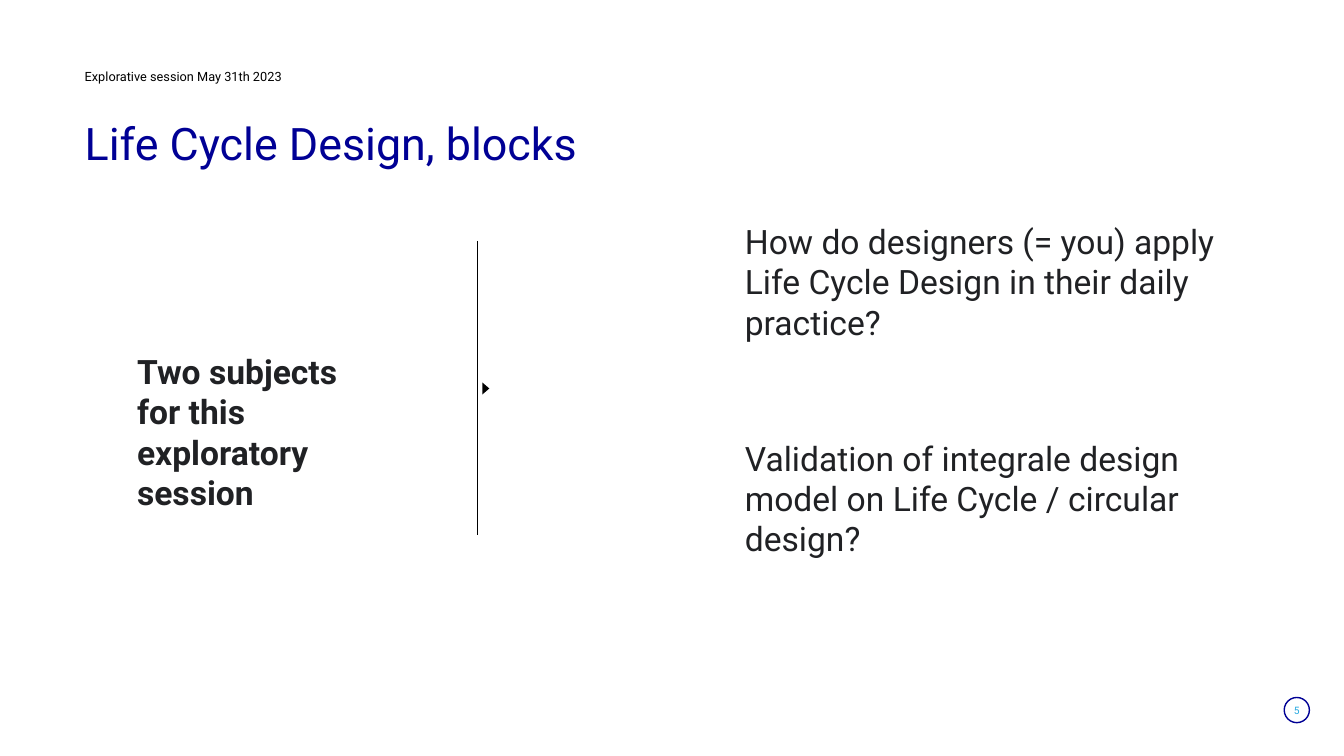
from lxml.etree import SubElement
from pptx import Presentation
from pptx.dml.color import RGBColor
from pptx.enum.shapes import MSO_CONNECTOR, MSO_SHAPE
from pptx.enum.text import MSO_ANCHOR, PP_ALIGN
from pptx.oxml.ns import qn
from pptx.util import Pt

NAVY = RGBColor(0x00, 0x00, 0x95)
SKY = RGBColor(0x24, 0xA8, 0xE0)
INK = RGBColor(0x20, 0x21, 0x24)
BLACK = RGBColor(0x00, 0x00, 0x00)


class SlideBuilder:
    font_name = "Roboto"

    def __init__(self, slide):
        self.slide = slide

    def fill_text(self, shape, paragraphs, size, color, bold=False, line_spacing=1.0,
                  align=PP_ALIGN.LEFT, anchor=MSO_ANCHOR.TOP):
        """Write (text, space before) pairs into a shape without insets."""
        frame = shape.text_frame
        frame.word_wrap = True
        frame.vertical_anchor = anchor
        frame.margin_left = frame.margin_right = frame.margin_top = frame.margin_bottom = 0
        for index, (text, space_before) in enumerate(paragraphs):
            paragraph = frame.add_paragraph() if index else frame.paragraphs[0]
            paragraph.alignment = align
            paragraph.line_spacing = line_spacing
            paragraph.space_before = Pt(space_before)
            run = paragraph.add_run()
            run.text = text
            run.font.name = self.font_name
            run.font.size = Pt(size)
            run.font.bold = bold
            run.font.color.rgb = color

    def title(self, text, left, top, width, height, size, color):
        shape = self.slide.shapes.title
        shape.left, shape.top, shape.width, shape.height = map(Pt, (left, top, width, height))
        self.fill_text(shape, [(text, 0)], size, color, line_spacing=0.9,
                       anchor=MSO_ANCHOR.MIDDLE)

    def text(self, paragraphs, left, top, width, height, size, color, **style):
        box = self.slide.shapes.add_textbox(*map(Pt, (left, top, width, height)))
        self.fill_text(box, paragraphs, size, color, **style)

    def shape(self, kind, left, top, width, height, fill=None, line=None, rotation=0):
        shape = self.slide.shapes.add_shape(kind, *map(Pt, (left, top, width, height)))
        shape.shadow.inherit = False
        shape.rotation = rotation
        if fill is None:
            shape.fill.background()
        else:
            shape.fill.solid()
            shape.fill.fore_color.rgb = fill
        if line is None:
            shape.line.fill.background()
        else:
            shape.line.color.rgb = line
            shape.line.width = Pt(1)

    def vertical_line(self, x, top, bottom, color):
        line = self.slide.shapes.add_connector(
            MSO_CONNECTOR.STRAIGHT, Pt(x), Pt(top), Pt(x), Pt(bottom))
        line.line.color.rgb = color
        line.line.width = Pt(0.75)
        SubElement(line.element.spPr, qn("a:effectLst"))


def main():
    presentation = Presentation()
    presentation.slide_width, presentation.slide_height = Pt(960), Pt(540)
    builder = SlideBuilder(presentation.slides.add_slide(presentation.slide_layouts[5]))

    builder.title("Explorative session May 31th 2023", 60.5, 46.8, 839.5, 17.3, 9.1, BLACK)
    builder.text([("Life Cycle Design, blocks", 0)], 60.5, 76.3, 838, 69, 32, NAVY,
                 line_spacing=1.16)

    builder.text([("Two subjects for this exploratory session", 0)],
                 97.9, 250.6, 173.5, 41, 24, INK, bold=True)
    builder.vertical_line(341.3, 172.1, 382.3, BLACK)
    builder.shape(MSO_SHAPE.ISOSCELES_TRIANGLE, 342.7, 275, 8.6, 5, fill=BLACK, rotation=90)
    builder.text([
        ("How do designers (= you) apply Life Cycle Design in their daily practice?", 3.6),
        ("Validation of integrale design model on Life Cycle / circular design?", 68.4),
    ], 532.1, 157.7, 368, 326, 24, INK)

    builder.shape(MSO_SHAPE.OVAL, 917.3, 498.2, 18, 18, line=NAVY)
    builder.text([("5", 0)], 920.2, 504, 12.2, 9.4, 7.3, SKY, line_spacing=0.9,
                 align=PP_ALIGN.CENTER)
    presentation.save("out.pptx")


if __name__ == "__main__":
    main()
